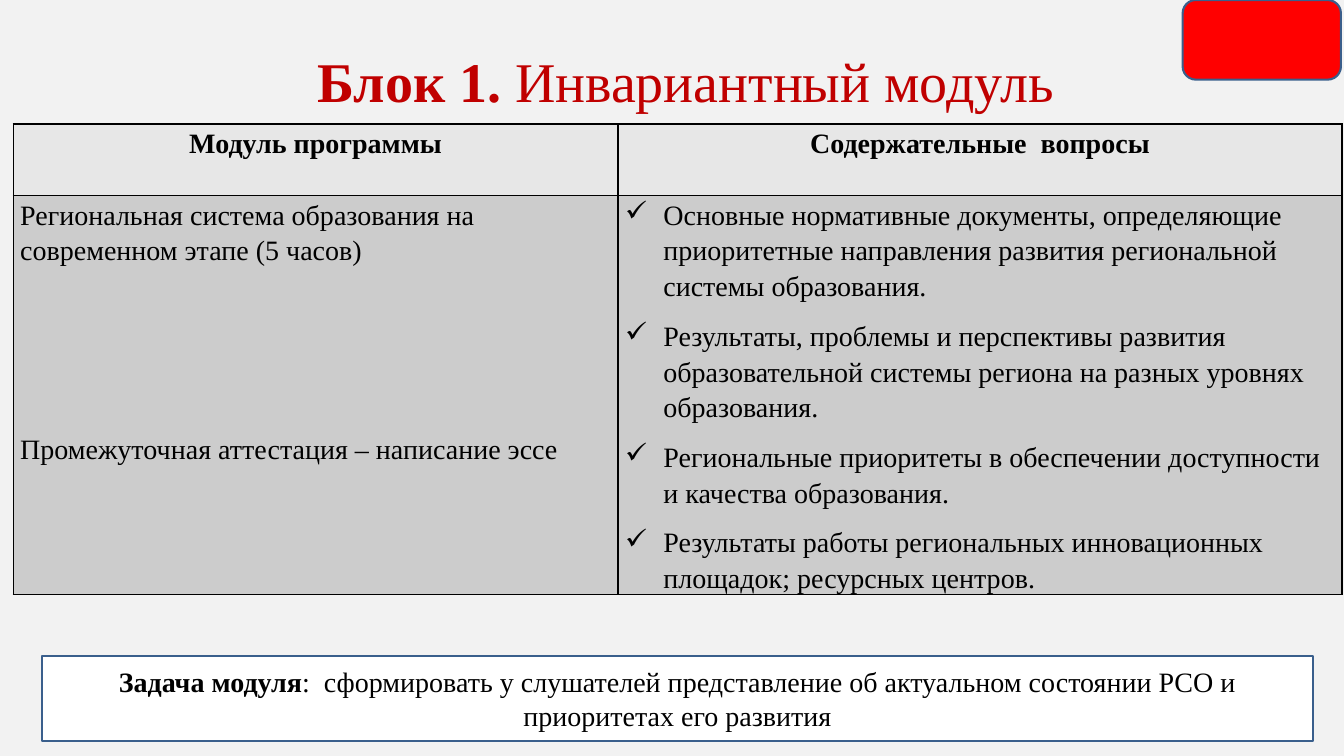
from lxml.etree import SubElement
from pptx import Presentation
from pptx.dml.color import RGBColor
from pptx.enum.shapes import MSO_SHAPE as Shape
from pptx.enum.text import MSO_ANCHOR as Anchor, PP_ALIGN as Align
from pptx.oxml.ns import qn
from pptx.util import Inches, Pt

BACKGROUND = RGBColor(0xF2, 0xF2, 0xF2)
TITLE_RED = RGBColor(0xC0, 0x00, 0x00)
RED = RGBColor(0xFF, 0x00, 0x00)
OUTLINE = RGBColor(0x3A, 0x5F, 0x8C)
HEADER_GRAY = RGBColor(0xE7, 0xE7, 0xE7)
BODY_GRAY = RGBColor(0xCC, 0xCC, 0xCC)
BLACK = RGBColor(0x00, 0x00, 0x00)
WHITE = RGBColor(0xFF, 0xFF, 0xFF)

HEADER_FORMAT = {"line_spacing": 1.15, "space_after": Pt(10), "alignment": Align.CENTER}
BODY_FORMAT = {"line_spacing": 1.15, "space_after": Pt(10), "alignment": Align.LEFT}


def add_run(paragraph, text, size=20, bold=False, color=BLACK):
    run = paragraph.add_run()
    run.text = text
    font_format = {"name": "Times New Roman", "size": Pt(size), "bold": bold}
    for name, value in font_format.items():
        setattr(run.font, name, value)
    run.font.color.rgb = color


def add_box(kind, left, top, width, height, fill):
    shape = slide.shapes.add_shape(
        kind, Inches(left), Inches(top), Inches(width), Inches(height))
    shape.shadow.inherit = False
    shape.fill.solid()
    shape.fill.fore_color.rgb = fill
    shape.line.color.rgb = OUTLINE
    shape.line.width = Pt(1.5)
    return shape


presentation = Presentation()
presentation.slide_width = Inches(13.33)
presentation.slide_height = Inches(7.5)
slide = presentation.slides.add_slide(presentation.slide_layouts[5])
slide.background.fill.solid()
slide.background.fill.fore_color.rgb = BACKGROUND

# Title
title = slide.shapes.title
title_place = {"left": 1.94, "top": 0.36, "width": 9.72, "height": 0.87}
for name, value in title_place.items():
    setattr(title, name, Inches(value))
title.text_frame.vertical_anchor = Anchor.MIDDLE
paragraph = title.text_frame.paragraphs[0]
paragraph.alignment = Align.CENTER
add_run(paragraph, "Блок 1.", 40, True, TITLE_RED)
add_run(paragraph, " Инвариантный модуль", 40, False, TITLE_RED)

# Table of modules and questions
rows = [
    [["Модуль программы"], ["Содержательные  вопросы"]],
    [
        ["Региональная система образования на современном этапе (5 часов)",
         "Промежуточная аттестация – написание эссе"],
        ["Основные нормативные документы, определяющие приоритетные "
         "направления развития региональной системы образования.",
         "Результаты, проблемы и перспективы развития образовательной "
         "системы региона на разных уровнях образования.",
         "Региональные приоритеты в обеспечении доступности и качества образования.",
         "Результаты работы региональных инновационных площадок; ресурсных центров."],
    ],
]
table = slide.shapes.add_table(
    2, 2, Inches(0.13), Inches(1.23), Inches(13.18), Inches(4.41)).table
for column, width in zip(table.columns, (6, 7.18)):
    column.width = Inches(width)
for row, height in zip(table.rows, (0.71, 3.7)):
    row.height = Inches(height)

cell_margins = {"margin_left": 0.07, "margin_right": 0.07, "margin_top": 0, "margin_bottom": 0}
for row_index, row in enumerate(rows):
    is_header = row_index == 0
    for column_index, texts in enumerate(row):
        cell = table.cell(row_index, column_index)
        for name, value in cell_margins.items():
            setattr(cell, name, Inches(value))

        # Borders come before the fill in the cell properties
        properties = cell._tc.get_or_add_tcPr()
        for side in ("a:lnL", "a:lnR", "a:lnT", "a:lnB"):
            border = SubElement(properties, qn(side), w=str(Pt(1)))
            border_fill = SubElement(border, qn("a:solidFill"))
            SubElement(border_fill, qn("a:srgbClr"), val=str(BLACK))
        cell.fill.solid()
        cell.fill.fore_color.rgb = HEADER_GRAY if is_header else BODY_GRAY

        for text_index, text in enumerate(texts):
            frame = cell.text_frame
            paragraph = frame.add_paragraph() if text_index else frame.paragraphs[0]
            paragraph_format = HEADER_FORMAT if is_header else BODY_FORMAT
            for name, value in paragraph_format.items():
                setattr(paragraph, name, value)
            add_run(paragraph, text, bold=is_header)
            if not is_header and column_index == 1:
                bullet = paragraph._p.get_or_add_pPr()
                bullet.set("marL", str(Inches(0.38)))
                bullet.set("indent", str(Inches(-0.38)))
                SubElement(bullet, qn("a:buChar"), char="✓")

# Gap between the module and its assessment
table.cell(1, 0).text_frame.paragraphs[1].space_before = Pt(106)

# Red corner block
add_box(Shape.ROUNDED_RECTANGLE, 11.73, 0, 1.57, 0.79, RED)

# Module goal
goal = add_box(Shape.RECTANGLE, 0.42, 6.51, 12.6, 0.84, WHITE)
goal.text_frame.word_wrap = True
goal.text_frame.vertical_anchor = Anchor.MIDDLE
paragraph = goal.text_frame.paragraphs[0]
paragraph.alignment = Align.CENTER
add_run(paragraph, "Задача модуля", bold=True)
add_run(paragraph, ":  сформировать у слушателей представление об актуальном "
                   "состоянии РСО и приоритетах его развития")

presentation.save("out.pptx")
